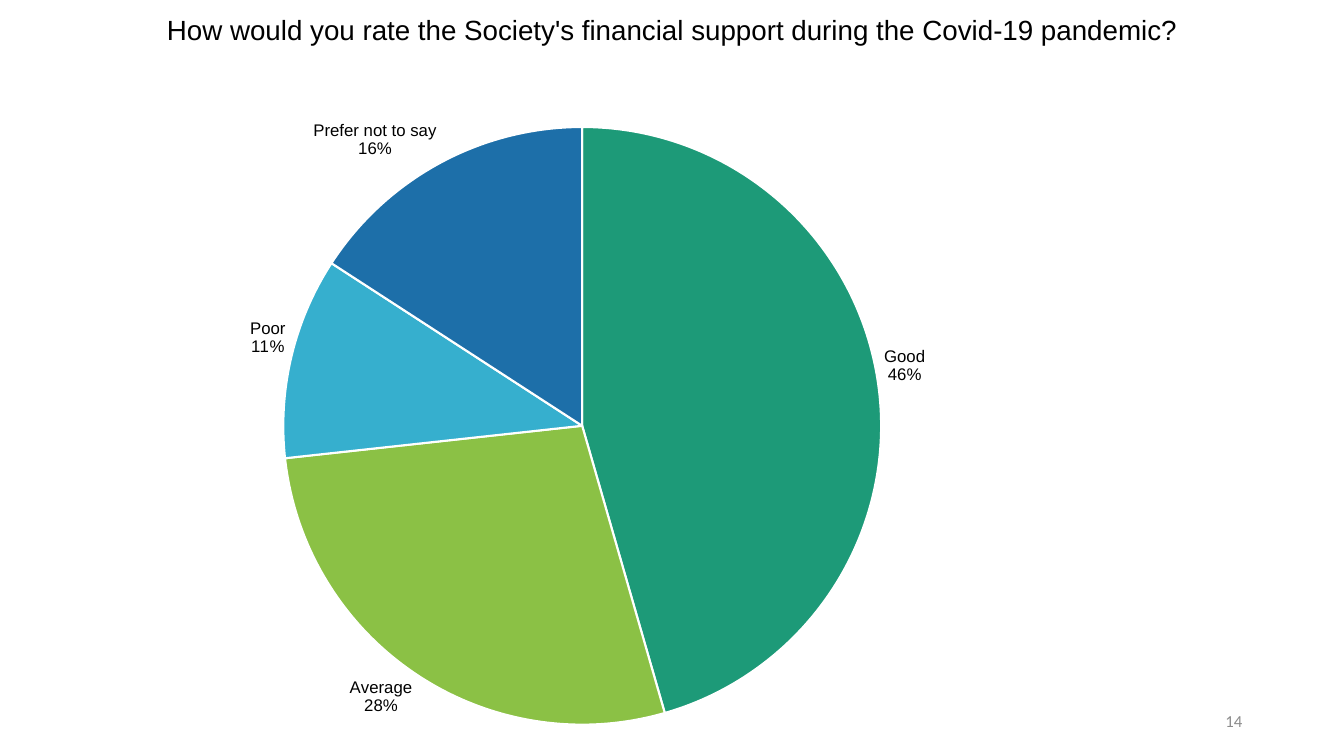
from lxml import etree
from pptx import Presentation
from pptx.chart.data import CategoryChartData
from pptx.dml.color import RGBColor
from pptx.enum.chart import XL_CHART_TYPE, XL_LABEL_POSITION
from pptx.enum.text import MSO_ANCHOR, PP_ALIGN
from pptx.oxml.ns import qn
from pptx.util import Inches, Pt

PIE = XL_CHART_TYPE.PIE
OUTSIDE = XL_LABEL_POSITION.OUTSIDE_END
MIDDLE = MSO_ANCHOR.MIDDLE
CENTER, RIGHT = PP_ALIGN.CENTER, PP_ALIGN.RIGHT

BLACK = RGBColor(0x00, 0x00, 0x00)
WHITE = RGBColor(0xFF, 0xFF, 0xFF)
GREY = RGBColor(0x8C, 0x8C, 0x8C)
TEAL = RGBColor(0x1D, 0x9A, 0x78)
GREEN = RGBColor(0x8B, 0xC1, 0x45)
SKY = RGBColor(0x36, 0xAF, 0xCE)
BLUE = RGBColor(0x1D, 0x6F, 0xA9)

RATINGS = [
    ("Good", 46, TEAL),
    ("Average", 28, GREEN),
    ("Poor", 11, SKY),
    ("Prefer not to say", 16, BLUE),
]


class SlideBuilder:
    heading_font = "Arial"
    body_font = "Calibri"

    def __init__(self, prs):
        self.slide = prs.slides.add_slide(prs.slide_layouts[6])

    def style(self, font, name, size, color):
        font.name = name
        font.size = Pt(size)
        font.color.rgb = color

    def text(self, text, box, name, size, color, align):
        sp = self.slide.shapes.add_textbox(*map(Inches, box))
        tf = sp.text_frame
        tf.word_wrap = True
        tf.vertical_anchor = MIDDLE
        p = tf.paragraphs[0]
        p.text = text
        p.alignment = align
        self.style(p.font, name, size, color)

    def pie(self, ratings, box, layout):
        names, values, colors = zip(*ratings)
        data = CategoryChartData()
        data.categories = names
        data.add_series("Series 1", values)
        frame = self.slide.shapes.add_chart(PIE, *map(Inches, box), data)
        chart = frame.chart
        chart.has_title = False
        chart.has_legend = False
        self.style(chart.font, self.body_font, 10, BLACK)
        plot = chart.plots[0]
        plot.vary_by_categories = True
        series = plot.series[0]
        for i, color in enumerate(colors):
            fmt = series.points[i].format
            fmt.fill.solid()
            fmt.fill.fore_color.rgb = color
            fmt.line.color.rgb = WHITE
            fmt.line.width = Pt(1.5)
        self.labels(series.data_labels)
        self.place_plot(chart, layout)

    def labels(self, labels):
        labels.show_value = False
        labels.show_category_name = True
        labels.show_percentage = True
        labels.number_format = "0%"
        labels.number_format_is_linked = False
        labels.position = OUTSIDE
        self.style(labels.font, self.heading_font, 12, BLACK)
        separator = etree.Element(qn("c:separator"))
        separator.text = "\n"
        labels._element.find(qn("c:showBubbleSize")).addnext(separator)

    def place_plot(self, chart, layout):
        area = chart._chartSpace.find(".//" + qn("c:plotArea"))
        for old in area.findall(qn("c:layout")):
            area.remove(old)
        outer = etree.Element(qn("c:layout"))
        manual = etree.SubElement(outer, qn("c:manualLayout"))
        settings = [("layoutTarget", "inner"), ("xMode", "edge"), ("yMode", "edge")]
        for tag, value in settings + list(zip("xywh", layout)):
            etree.SubElement(manual, qn("c:" + tag)).set("val", str(value))
        area.insert(0, outer)


def main():
    prs = Presentation()
    prs.slide_width = Inches(13.33)
    prs.slide_height = Inches(7.5)
    s = SlideBuilder(prs)
    s.text("How would you rate the Society's financial support during the Covid-19 pandemic?",
           (0, 0, 13.33, 0.58), s.heading_font, 19.8, BLACK, CENTER)
    chart_box = left, top, width, height = 0, 0.89, 11.5, 6.61
    diameter = 5.93
    layout = ((2.81 - left) / width, (1.26 - top) / height,
              diameter / width, diameter / height)
    s.pie(RATINGS, chart_box, layout)
    s.text("14", (9.42, 6.95, 3, 0.4), s.body_font, 12, GREY, RIGHT)
    prs.save("out.pptx")


if __name__ == "__main__":
    main()
